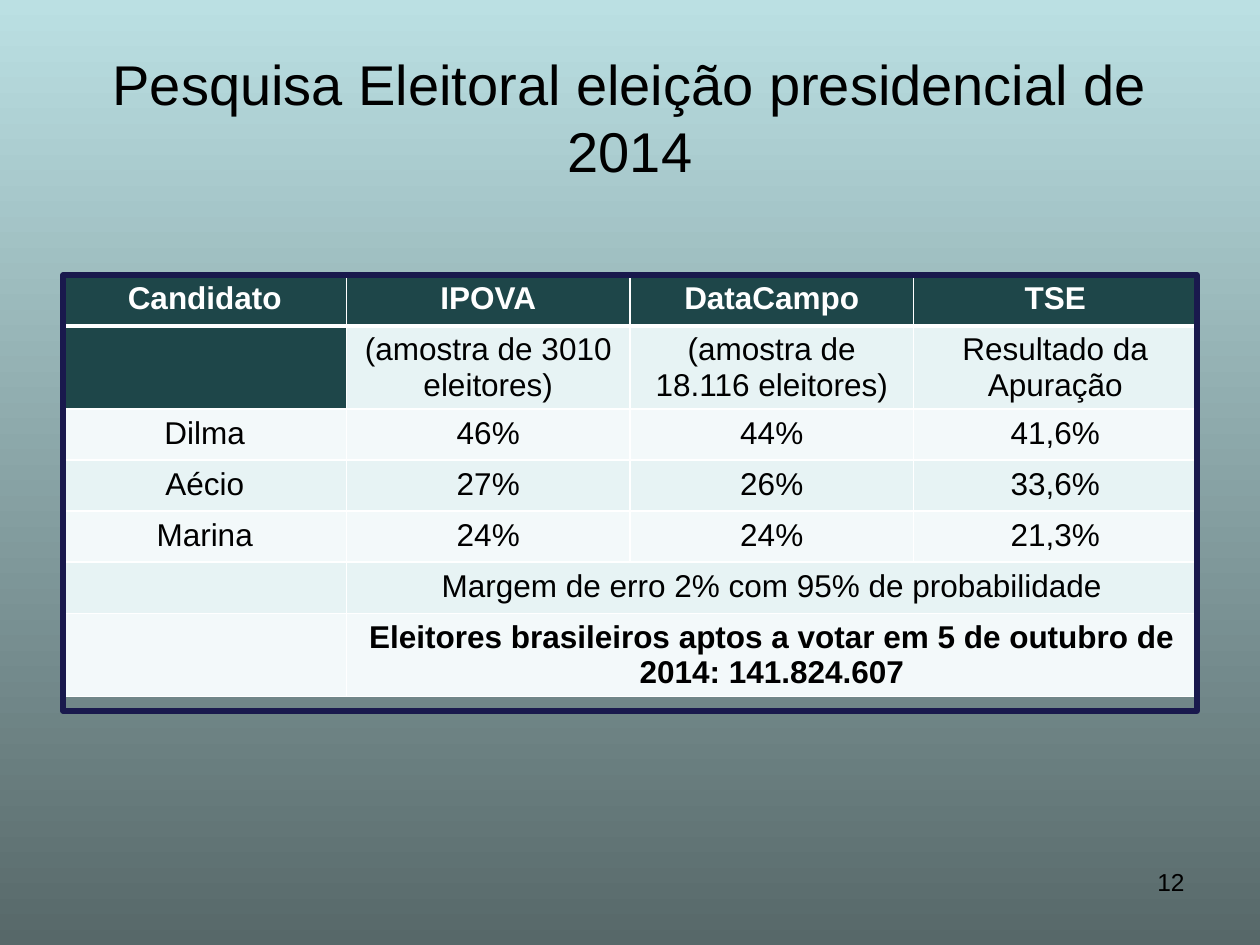
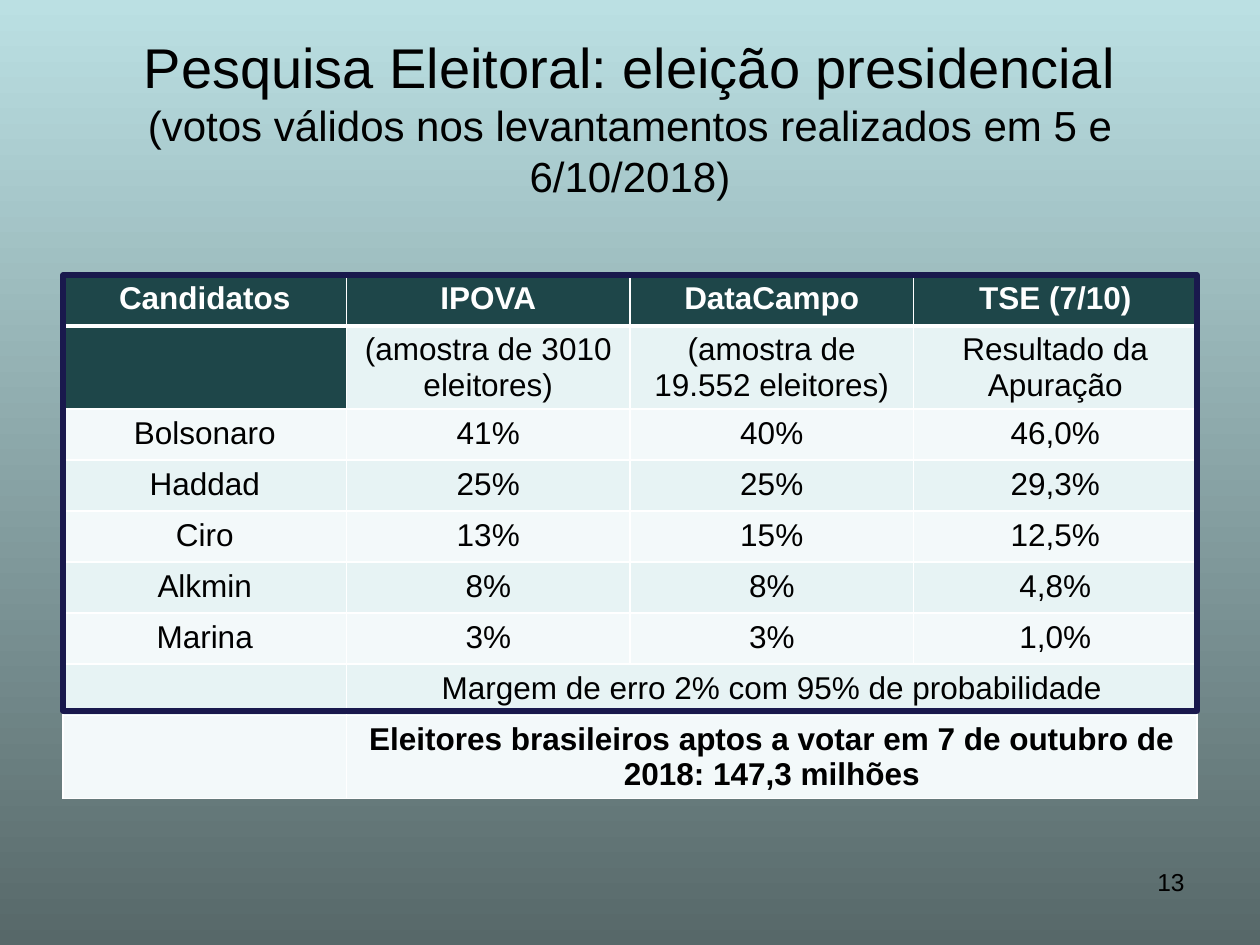
from dataclasses import dataclass
from typing import Any

from lxml.etree import SubElement
from pptx import Presentation
from pptx.dml.color import RGBColor
from pptx.enum.shapes import MSO_SHAPE
from pptx.enum.text import MSO_ANCHOR, MSO_AUTO_SIZE, PP_ALIGN
from pptx.oxml.ns import qn
from pptx.util import Emu, Pt

EMU_PER_PX = 914400 / 126

BLACK = RGBColor(0x00, 0x00, 0x00)
WHITE = RGBColor(0xFF, 0xFF, 0xFF)
SKY = RGBColor(0xBB, 0xE0, 0xE3)
SLATE = RGBColor(0x57, 0x68, 0x69)
TEAL = RGBColor(0x1E, 0x46, 0x49)
BANDS = (RGBColor(0xE7, 0xF3, 0xF4), RGBColor(0xF3, 0xF9, 0xFA))
NAVY = RGBColor(0x19, 0x19, 0x4D)

FRAME_LINE = 3
ROW_H, TALL_ROW_H = 51, 83
COLUMNS = 4


@dataclass(frozen=True)
class Box:
    left: int
    top: int
    width: int
    height: int

    def emu(self) -> tuple[Emu, ...]:
        return tuple(px(v) for v in (self.left, self.top, self.width, self.height))


@dataclass(frozen=True)
class TitleLine:
    text: str
    size: int
    indent: int = 0


@dataclass(frozen=True)
class Poll:
    title: tuple[TitleLine, ...]
    header: tuple[str, ...]
    samples: tuple[str, ...]
    results: tuple[tuple[str, ...], ...]
    voters: str
    number: int


TITLE = Box(63, 38, 1134, 157)
TABLE = Box(63, 275, 1134, 432)
FRAME = Box(63, 275, 1134, 436)
NUMBER = Box(903, 861, 294, 66)
MARGIN_NOTE = "Margem de erro 2% com 95% de probabilidade"

POLLS = (
    Poll(
        title=(TitleLine("Pesquisa Eleitoral eleição presidencial de 2014", 32),),
        header=("Candidato", "IPOVA", "DataCampo", "TSE"),
        samples=("(amostra de 3010 eleitores)", "(amostra de 18.116 eleitores)",
                 "Resultado da Apuração"),
        results=(
            ("Dilma", "46%", "44%", "41,6%"),
            ("Aécio", "27%", "26%", "33,6%"),
            ("Marina", "24%", "24%", "21,3%"),
        ),
        voters="Eleitores brasileiros aptos a votar em 5 de outubro de 2014: 141.824.607",
        number=12,
    ),
    Poll(
        title=(
            TitleLine("Pesquisa Eleitoral: eleição presidencial", 32, -50),
            TitleLine("(votos válidos nos levantamentos realizados em 5 e 6/10/2018)", 24),
        ),
        header=("Candidatos", "IPOVA", "DataCampo", "TSE (7/10)"),
        samples=("(amostra de 3010 eleitores)", "(amostra de 19.552 eleitores)",
                 "Resultado da Apuração"),
        results=(
            ("Bolsonaro", "41%", "40%", "46,0%"),
            ("Haddad", "25%", "25%", "29,3%"),
            ("Ciro", "13%", "15%", "12,5%"),
            ("Alkmin", "8%", "8%", "4,8%"),
            ("Marina", "3%", "3%", "1,0%"),
        ),
        voters="Eleitores brasileiros aptos a votar em 7 de outubro de 2018: 147,3 milhões",
        number=13,
    ),
)


def px(value: int) -> Emu:
    return Emu(round(value * EMU_PER_PX))


def apply(target: Any, values: dict[str, Any]) -> None:
    for name, value in values.items():
        setattr(target, name, value)


def place(sp: Any, box: Box) -> None:
    apply(sp, dict(zip(("left", "top", "width", "height"), box.emu())))


def write(p: Any, text: str, size: int, color: RGBColor = BLACK,
          bold: bool = False, align: PP_ALIGN = PP_ALIGN.CENTER) -> None:
    p.alignment = align
    r = p.add_run()
    r.text = text
    apply(r.font, {"name": "Arial", "size": Pt(size), "bold": bold})
    r.font.color.rgb = color


def paint_background(prs: Any) -> None:
    fill = prs.slide_master.background.fill
    fill.gradient()
    fill.gradient_angle = 270
    for stop, position, color in zip(fill.gradient_stops, (0, 1), (SKY, SLATE)):
        stop.position = position
        stop.color.rgb = color


def add_title(s: Any, lines: tuple[TitleLine, ...]) -> None:
    sp = s.shapes.title
    place(sp, TITLE)
    tf = sp.text_frame
    apply(tf, {"word_wrap": True, "auto_size": MSO_AUTO_SIZE.NONE,
               "vertical_anchor": MSO_ANCHOR.MIDDLE})
    for i, line in enumerate(lines):
        p = tf.add_paragraph() if i else tf.paragraphs[0]
        write(p, line.text, line.size)
        if line.indent:
            pPr = p._p.get_or_add_pPr()
            pPr.set("marL", "0")
            pPr.set("indent", str(px(line.indent)))


def set_borders(cell: Any, row: int) -> None:
    widths = {"lnL": 1, "lnR": 1, "lnT": 3 if row == 1 else 1, "lnB": 3 if row == 0 else 1}
    tcPr = cell._tc.get_or_add_tcPr()
    for i, (tag, width) in enumerate(widths.items()):
        ln = SubElement(tcPr, qn(f"a:{tag}"), w=str(Pt(width)))
        fill = SubElement(ln, qn("a:solidFill"))
        SubElement(fill, qn("a:srgbClr"), val=str(WHITE))
        tcPr.insert(i, ln)


def add_poll_table(s: Any, poll: Poll) -> None:
    rows = (poll.header, ("", *poll.samples), *poll.results,
            ("", MARGIN_NOTE), ("", poll.voters))
    last = len(rows) - 1
    table = s.shapes.add_table(len(rows), COLUMNS, *TABLE.emu()).table
    for column in table.columns:
        column.width = px(TABLE.width) // COLUMNS
    for i, texts in enumerate(rows):
        table.rows[i].height = px(TALL_ROW_H if i in (1, last) else ROW_H)
        for j in range(COLUMNS):
            cell = table.cell(i, j)
            dark = i == 0 or (i, j) == (1, 0)
            cell.fill.solid()
            cell.fill.fore_color.rgb = TEAL if dark else BANDS[(i - 1) % 2]
            set_borders(cell, i)
            if j < len(texts) and texts[j]:
                write(cell.text_frame.paragraphs[0], texts[j], 18,
                      WHITE if dark else BLACK, i in (0, last))
        if len(texts) < COLUMNS:
            table.cell(i, 1).merge(table.cell(i, COLUMNS - 1))


def add_frame(s: Any) -> None:
    sp = s.shapes.add_shape(MSO_SHAPE.RECTANGLE, *FRAME.emu())
    sp.shadow.inherit = False
    sp.fill.background()
    sp.line.color.rgb = NAVY
    sp.line.width = Pt(FRAME_LINE)


def add_number(s: Any, number: int) -> None:
    tf = s.shapes.add_textbox(*NUMBER.emu()).text_frame
    tf.word_wrap = True
    write(tf.paragraphs[0], str(number), 14, align=PP_ALIGN.RIGHT)


def main() -> None:
    prs = Presentation()
    apply(prs, {"slide_width": px(1260), "slide_height": px(945)})
    paint_background(prs)
    for poll in POLLS:
        s = prs.slides.add_slide(prs.slide_layouts.get_by_name("Title Only"))
        add_title(s, poll.title)
        add_poll_table(s, poll)
        add_frame(s)
        add_number(s, poll.number)
    prs.save("out.pptx")


if __name__ == "__main__":
    main()
